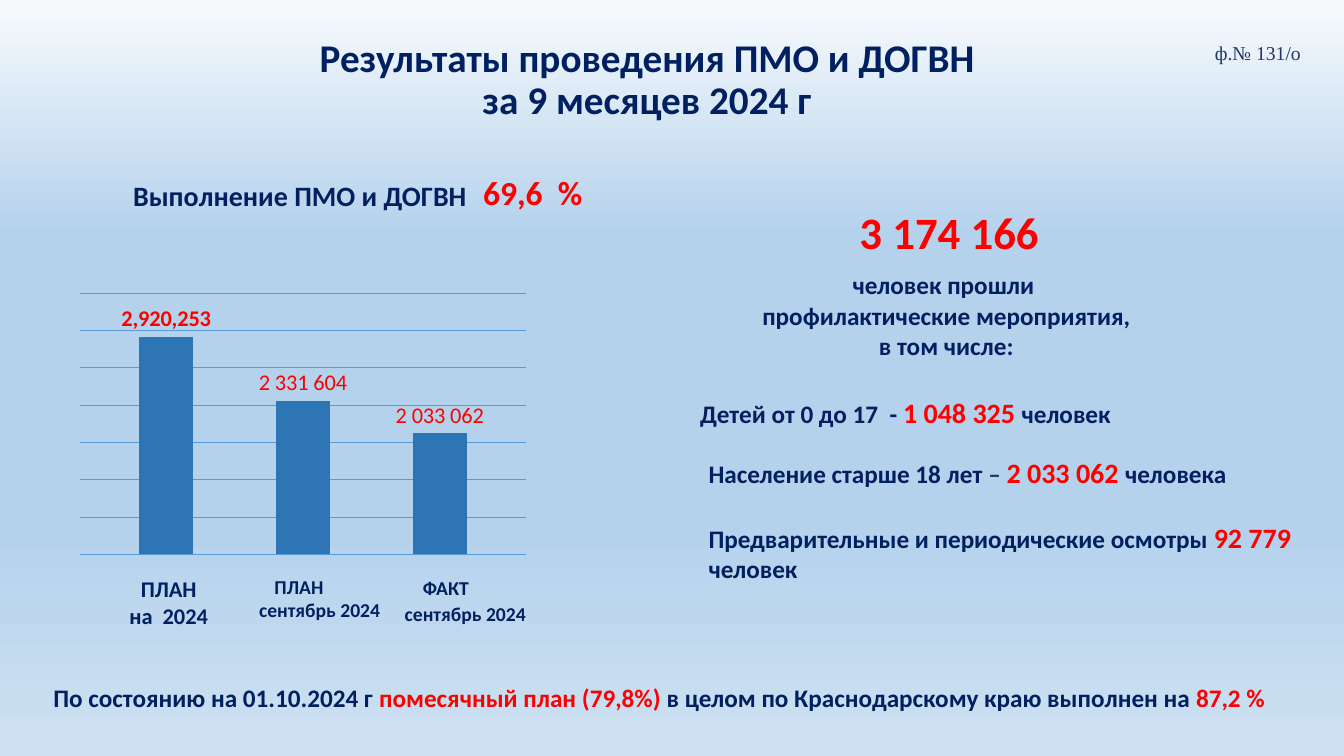
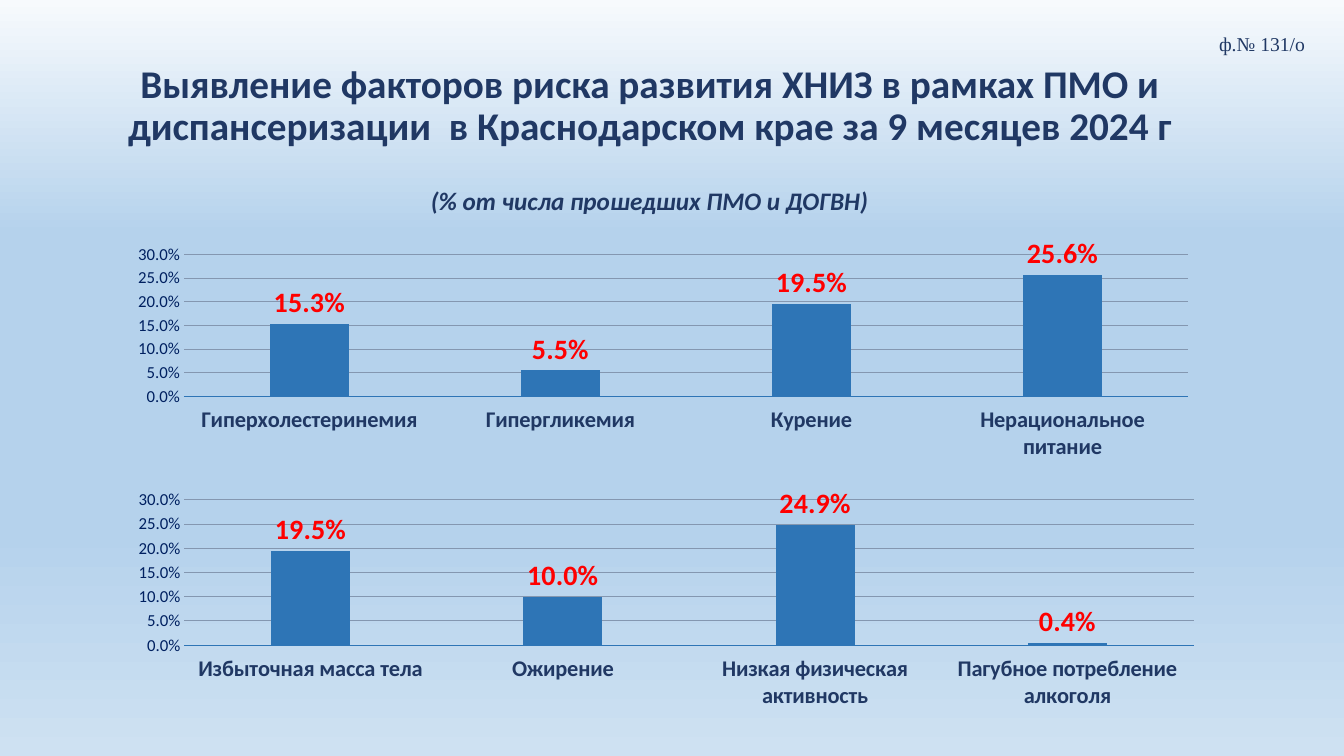
from collections import namedtuple

from lxml import etree
from pptx import Presentation
from pptx.chart.data import CategoryChartData
from pptx.dml.color import RGBColor
from pptx.enum.chart import XL_CHART_TYPE, XL_LABEL_POSITION, XL_TICK_LABEL_POSITION, XL_TICK_MARK
from pptx.enum.text import MSO_ANCHOR, PP_ALIGN
from pptx.oxml.ns import qn
from pptx.util import Pt

COLUMNS = XL_CHART_TYPE.COLUMN_CLUSTERED
OUTSIDE_END = XL_LABEL_POSITION.OUTSIDE_END
LABELS_LOW = XL_TICK_LABEL_POSITION.LOW
NO_TICK = XL_TICK_MARK.NONE
MIDDLE = MSO_ANCHOR.MIDDLE
LEFT, CENTER = PP_ALIGN.LEFT, PP_ALIGN.CENTER

Box = namedtuple("Box", "left top width height")
PAGE = Box(0, 0, 960, 540)
COLORS = {
    "navy": "002060", "slate": "203864", "red": "FF0000", "black": "000000",
    "bar": "2E75B6", "grid_blue": "5B9BD5", "grid_gray": "8497B0",
}
BACKGROUND = ((0, "F7FAFD"), (31, "B5D2EC"), (70, "B5D2EC"), (100, "CEE1F2"))
BASE_FONT = {"name": "Calibri", "bold": True, "color": "navy"}
STYLES = {
    "title": {"size": 28},
    "risk_title": {"size": 28, "color": "slate"},
    "subtitle": {"size": 18, "color": "slate", "italic": True},
    "form": {"size": 14, "color": "slate", "name": "Times New Roman", "bold": False},
    "heading": {"size": 20},
    "body": {"size": 18},
    "dash": {"size": 18, "color": "slate"},
    "body_red": {"size": 18, "color": "red"},
    "figure": {"size": 20, "color": "red"},
    "percent": {"size": 24, "color": "red"},
    "total": {"size": 32, "color": "red"},
    "year_plan": {"size": 16},
    "month": {"size": 14},
    "bar_value": {"size": 16, "color": "red"},
    "bar_caption": {"size": 16, "color": "red", "bold": False},
    "category": {"size": 16, "color": "slate"},
    "scale": {"size": 12, "bold": False},
    "chart": {"size": 10, "color": "black", "bold": False},
}


def apply(target, values):
    """Set every attribute named in a dict."""
    for name, value in values.items():
        setattr(target, name, value)


def rgb(color):
    """Look up a named colour."""
    return RGBColor.from_string(COLORS[color])


def style_font(font, style):
    """Format a font by style name."""
    values = {**BASE_FONT, **STYLES[style]}
    font.color.rgb = rgb(values.pop("color"))
    apply(font, {**values, "size": Pt(values["size"])})


def within(box, left, top, width, height):
    """Return a box placed relative to another box."""
    return Box(box.left + left, box.top + top, width, height)


def points(box):
    """Convert a box to lengths."""
    return [Pt(length) for length in box]


def add_text(slide, box, paragraphs, align=LEFT, wrap=True, anchor=None, spacing=None, gaps=(), indents=()):
    """Write paragraphs of (text, style) runs into a text box."""
    frame = slide.shapes.add_textbox(*points(box)).text_frame
    apply(frame, {"word_wrap": wrap, "vertical_anchor": anchor})
    for index, runs in enumerate(paragraphs):
        paragraph = frame.paragraphs[0] if index == 0 else frame.add_paragraph()
        apply(paragraph, {"alignment": align, "line_spacing": spacing})
        if index < len(gaps):
            paragraph.space_before = Pt(gaps[index])
        if index < len(indents):
            paragraph._p.get_or_add_pPr().set("marL", str(Pt(indents[index])))
        for text, style in runs:
            run = paragraph.add_run()
            run.text = text
            style_font(run.font, style)


def add_title(slide, box, paragraphs, gaps=()):
    """Place the centred slide title."""
    add_text(slide, box, paragraphs, CENTER, anchor=MIDDLE, spacing=0.9, gaps=gaps)


def add_form_code(slide, box):
    """Place the report form number."""
    add_text(slide, box, [[("ф.№ 131/о", "form")]], CENTER, wrap=False)


def set_plot_area(chart, shares):
    """Fix the inner plot area as shares of the chart."""
    area = chart._chartSpace.find(".//" + qn("c:plotArea"))
    for layout in area.findall(qn("c:layout")):
        area.remove(layout)
    layout = etree.Element(qn("c:layout"))
    manual = etree.SubElement(layout, qn("c:manualLayout"))
    values = ("inner", "edge", "edge", *shares)
    for tag, value in zip(("layoutTarget", "xMode", "yMode", "x", "y", "w", "h"), values):
        etree.SubElement(manual, qn("c:" + tag)).set("val", str(value))
    area.insert(0, layout)


def add_columns(slide, box, categories, series_values, plot_shares, scale, grid, number_format, label_style):
    """Draw a column chart with labelled bars and return it."""
    data = CategoryChartData(number_format=number_format)
    data.categories = categories
    for number, values in enumerate(series_values, 1):
        data.add_series(f"Series {number}", values)
    chart = slide.shapes.add_chart(COLUMNS, *points(box), data).chart
    apply(chart, {"has_title": False, "has_legend": False})
    style_font(chart.font, "chart")
    set_plot_area(chart, plot_shares)
    plot = chart.plots[0]
    apply(plot, {"gap_width": 219, "overlap": -27, "vary_by_categories": False})
    for series in plot.series:
        series.invert_if_negative = False
        series.format.fill.solid()
        series.format.fill.fore_color.rgb = rgb("bar")
        labels = series.data_labels
        apply(labels, {"show_value": True, "position": OUTSIDE_END,
                       "number_format": number_format, "number_format_is_linked": False})
        style_font(labels.font, label_style)
    ticks = {"major_tick_mark": NO_TICK, "minor_tick_mark": NO_TICK}
    apply(chart.category_axis, {**ticks, "tick_label_position": LABELS_LOW})
    style_font(chart.category_axis.tick_labels.font, "category")
    axis_line = chart.category_axis.format.line
    axis_line.color.rgb = rgb("bar")
    axis_line.width = Pt(0.75)
    value_axis = chart.value_axis
    apply(value_axis, {**ticks, **scale, "minimum_scale": 0, "has_major_gridlines": True})
    apply(value_axis.tick_labels, {"number_format": number_format, "number_format_is_linked": False})
    style_font(value_axis.tick_labels.font, "scale")
    value_axis.format.line.fill.background()
    grid_line = value_axis.major_gridlines.format.line
    grid_line.color.rgb = rgb(grid)
    grid_line.width = Pt(0.75)
    return chart


def plan_panel(slide, box):
    """Show the yearly plan, the monthly plan and the result as bars."""
    add_text(slide, within(box, 66, 5, 326, 32), [[("Выполнение ПМО и ДОГВН", "heading")]])
    add_text(slide, within(box, 316, 0, 86, 36), [[("69,6  %", "percent")]], wrap=False)
    chart = add_columns(
        slide, within(box, 0, 75, 505, 222), ["1"],
        [[2920253], [None], [2061999], [None], [1621686]], (0.07, 0.07, 0.63, 0.84),
        {"maximum_scale": 3500000, "major_unit": 500000}, "grid_blue", "#,##0", "bar_value")
    apply(chart.category_axis, {"visible": False})
    apply(chart.value_axis, {"visible": False})
    for index, caption in ((2, "2 331 604"), (4, "2 033 062")):
        label = chart.plots[0].series[index].points[0].data_label
        label.position = OUTSIDE_END
        run = label.text_frame.paragraphs[0].add_run()
        run.text = caption
        style_font(run.font, "bar_caption")
    bar_names = (
        (61, 75, "ПЛАН", "на  2024", "year_plan", {"align": CENTER}),
        (156, 105, "ПЛАН", "сентябрь 2024", "month", {"indents": (11,)}),
        (260, 109, "ФАКТ", "сентябрь 2024", "month", {"indents": (13,), "spacing": 1.07}),
    )
    for left, width, kind, period, style, layout in bar_names:
        add_text(slide, within(box, left, 288, width, 46),
                 [[(kind, style)], [(period, style)]], wrap=False, **layout)


def coverage_panel(slide, box):
    """List how many people were examined."""
    add_text(slide, within(box, 96, 3, 178, 46), [[("3 174 166", "total")]], CENTER)
    lines = ("человек прошли ", "профилактические мероприятия,", "в том числе:")
    add_text(slide, within(box, 43, 49, 280, 73), [[(line, "body")] for line in lines], CENTER, wrap=False)
    add_text(slide, within(box, 0, 139, 432, 32), [
        [("Детей от 0 до 17  - ", "body"), ("1 048 325 ", "figure"), ("человек", "body")]])
    add_text(slide, within(box, 6, 182, 434, 100), [
        [("Население старше 18 лет ", "body"), ("– ", "dash"),
         ("2 033 062 ", "figure"), ("человека", "body")],
        [("Предварительные и периодические осмотры ", "body"),
         ("92 779 ", "figure"), ("человек", "body")]], gaps=(0, 22))


def results_slide(slide, box):
    """Build the slide of examination results."""
    add_title(slide, within(box, 0, 15, 924, 85), [
        [("Результаты проведения ПМО и ДОГВН", "title")], [("за 9 месяцев 2024 г", "title")]])
    add_form_code(slide, within(box, 860, 26, 77, 24))
    plan_panel(slide, within(box, 22, 119, 505, 334))
    coverage_panel(slide, within(box, 493, 140, 440, 282))
    add_text(slide, within(box, 31, 482, 902, 31), [
        [("По состоянию на 01.10.2024 г ", "body"), ("помесячный план (79,8%) ", "body_red"),
         ("в целом по Краснодарскому краю выполнен на ", "body"), ("87,2 %", "body_red")]], spacing=1.07)


def risk_slide(slide, box):
    """Build the slide of risk factor shares."""
    add_title(slide, within(box, 50, 48, 828, 104), [
        [("Выявление факторов риска развития ХНИЗ в рамках ПМО и диспансеризации  "
          "в Краснодарском крае за 9 месяцев 2024 г", "risk_title")],
        [("(% от числа прошедших ПМО и ДОГВН)", "subtitle")]], gaps=(0, 28))
    add_form_code(slide, within(box, 863, 19, 77, 24))
    factor_rows = (
        (within(box, 69, 166, 780, 175),
         {"Гиперхолестеринемия": 0.153, "Гипергликемия": 0.055,
          "Курение": 0.195, "Нерациональное питание": 0.256}),
        (within(box, 69, 341, 784, 179),
         {"Избыточная масса тела": 0.195, "Ожирение": 0.1,
          "Низкая физическая активность": 0.249, "Пагубное потребление алкоголя": 0.004}),
    )
    for row, factors in factor_rows:
        add_columns(slide, row, list(factors), [list(factors.values())], (0.08, 0.09, 0.92, 0.58),
                    {"maximum_scale": 0.3, "major_unit": 0.05}, "grid_gray", "0.0%", "figure")


def set_background(master):
    """Give all slides the shared vertical gradient."""
    fill = master.background.fill
    fill.gradient()
    fill.gradient_angle = 270
    stops = master.element.find(".//" + qn("a:gsLst"))
    for stop in list(stops):
        stops.remove(stop)
    for position, color in BACKGROUND:
        stop = etree.SubElement(stops, qn("a:gs"), pos=str(position * 1000))
        etree.SubElement(stop, qn("a:srgbClr"), val=color)


def main():
    """Build and save the presentation."""
    deck = Presentation()
    apply(deck, {"slide_width": Pt(PAGE.width), "slide_height": Pt(PAGE.height)})
    set_background(deck.slide_master)
    for build in (results_slide, risk_slide):
        build(deck.slides.add_slide(deck.slide_layouts[6]), PAGE)
    deck.save("out.pptx")


if __name__ == "__main__":
    main()
